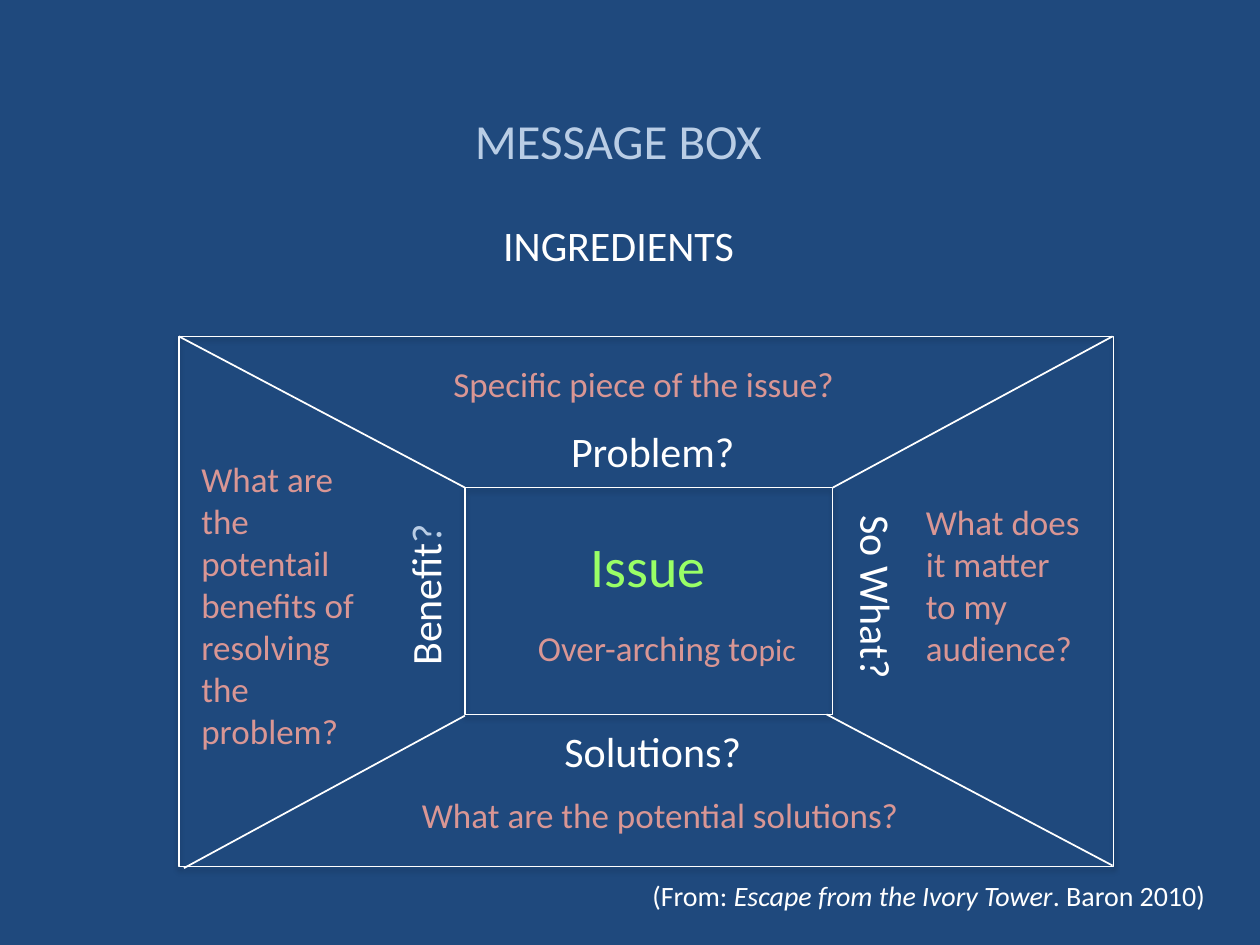
"""Build the message box slide: an issue framed by four questions."""
from lxml.etree import SubElement
from pptx import Presentation
from pptx.dml.color import RGBColor
from pptx.enum.shapes import MSO_CONNECTOR, MSO_SHAPE
from pptx.enum.text import MSO_AUTO_SIZE, PP_ALIGN
from pptx.oxml.ns import qn
from pptx.util import Inches, Pt

COLORS = {
    "back": "1F497D",
    "white": "FFFFFF",
    "pale": "B9CDE5",
    "rose": "D99694",
    "lime": "99FF66",
}
FRAMES = [(1.42, 2.67, 7.42, 4.21), (3.69, 3.87, 2.92, 1.8)]
SPOKES = [
    (1.42, 2.67, 3.69, 3.87),
    (6.56, 5.67, 8.83, 6.87),
    (6.61, 3.87, 8.83, 2.67),
    (1.46, 6.89, 3.69, 5.68),
]
LABELS = [
    ("Issue", (4.58, 4.17, 1.13, 0.64), 32, "lime", 0),
    ("Problem?", (4.42, 3.33, 1.52, 0.5), 24, "white", 0),
    ("Solutions?", (4.37, 5.71, 1.62, 0.5), 24, "white", 0),
    ("So What?", (6.2, 4.49, 1.52, 0.5), 24, "white", 90),
    ("INGREDIENTS", (1.5, 1.69, 6.82, 0.5), 24, "white", 0),
]
HINTS = [
    (["Specific piece of the issue?"], (3.5, 2.83, 3.25, 0.44), False),
    (["What does it matter", "to my audience?"], (7.25, 3.92, 1.5, 1.45), True),
    (["What are the potential solutions?"], (3.25, 6.25, 4.03, 0.44), False),
    (["What are the potentail benefits of resolving the problem?"],
     (1.5, 3.58, 1.5, 2.46), True),
]


def color(name):
    """Return the named colour."""
    return RGBColor.from_string(COLORS[name])


def add_frame(slide, box):
    """Add an outlined rectangle with the soft shadow of the theme."""
    frame = slide.shapes.add_shape(MSO_SHAPE.RECTANGLE, *map(Inches, box))
    frame.fill.background()
    frame.line.color.rgb = color("white")
    frame.line.width = Pt(0.75)


def add_spoke(slide, ends):
    """Add a plain line between two corners."""
    spoke = slide.shapes.add_connector(MSO_CONNECTOR.STRAIGHT, *map(Inches, ends))
    spoke.line.color.rgb = color("white")
    spoke.line.width = Pt(1)
    SubElement(spoke.element.spPr, qn("a:effectLst"))


def add_text(slide, box, lines, size, tint, align=PP_ALIGN.LEFT, turn=0, wrap=False):
    """Add a text box, each line a list of runs, and return its paragraphs."""
    shape = slide.shapes.add_textbox(*map(Inches, box))
    shape.rotation = turn
    frame = shape.text_frame
    frame.word_wrap = wrap
    frame.auto_size = MSO_AUTO_SIZE.SHAPE_TO_FIT_TEXT
    for index, runs in enumerate(lines):
        para = frame.add_paragraph() if index else frame.paragraphs[0]
        para.alignment = align
        para.font.name = "Calibri"
        para.font.size = Pt(size)
        para.font.color.rgb = color(tint)
        for text in runs:
            para.add_run().text = text
    return frame.paragraphs


def add_mixed(slide):
    """Add the texts in which one run differs from the rest."""
    para = add_text(slide, (2.7, 4.47, 1.34, 0.5), [["Benefit", "?"]], 24, "white",
                    PP_ALIGN.CENTER, 270)[0]
    para.runs[1].font.color.rgb = color("pale")
    para = add_text(slide, (4.17, 4.92, 2.28, 0.44), [["Over-arching to", "pic"]],
                    20, "rose")[0]
    para.runs[1].font.size = Pt(18)
    cite = ["(From: ", "Escape from the Ivory Tower", ". Baron 2010)"]
    para = add_text(slide, (5.08, 6.92, 4.7, 0.37), [cite], 16, "white")[0]
    para.runs[1].font.italic = True


def main():
    """Build and save the slide."""
    deck = Presentation()
    deck.slide_width, deck.slide_height = Inches(10), Inches(7.5)
    slide = deck.slides.add_slide(deck.slide_layouts[6])
    slide.background.fill.solid()
    slide.background.fill.fore_color.rgb = color("back")
    for box in FRAMES:
        add_frame(slide, box)
    for ends in SPOKES:
        add_spoke(slide, ends)
    add_text(slide, (3.67, 0.83, 2.52, 0.57), [["MESSAGE BOX"]], 28, "pale")
    for text, box, size, tint, turn in LABELS:
        add_text(slide, box, [[text]], size, tint, PP_ALIGN.CENTER, turn)
    for lines, box, wrap in HINTS:
        add_text(slide, box, [[line] for line in lines], 20, "rose", wrap=wrap)
    add_mixed(slide)
    deck.save("out.pptx")


if __name__ == "__main__":
    main()
